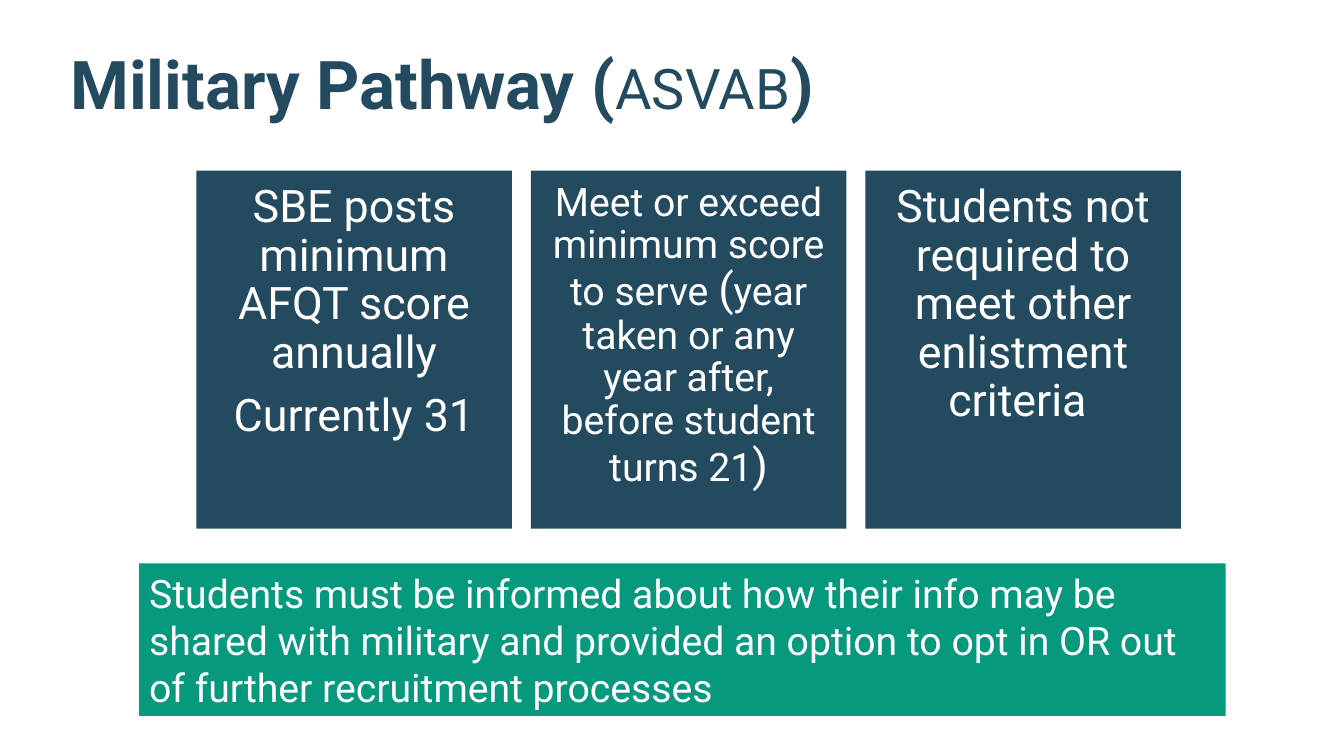
from pptx import Presentation
from pptx import util as u
from pptx.dml.color import RGBColor
from pptx.enum import shapes, text

NAVY = RGBColor(0x24, 0x4A, 0x5F)
GREEN = RGBColor(0x06, 0x99, 0x7E)
WHITE = RGBColor(0xFF, 0xFF, 0xFF)


class SlideBuilder:
    font = "Roboto"

    def __init__(self, prs):
        self.s = prs.slides.add_slide(prs.slide_layouts[5])

    def add_runs(self, p, runs, color):
        p.font.name = self.font
        p.font.color.rgb = color
        sizes = {size for _, size, _ in runs}
        if len(sizes) == 1:
            p.font.size = u.Pt(sizes.pop())
        for words, size, bold in runs:
            r = p.add_run()
            r.text = words
            r.font.name = self.font
            r.font.color.rgb = color
            r.font.size = u.Pt(size)
            r.font.bold = bold

    def title(self, runs, left, top, width, height):
        sp = self.s.shapes.title
        sp.left, sp.top = u.Cm(left), u.Cm(top)
        sp.width, sp.height = u.Cm(width), u.Cm(height)
        tf = sp.text_frame
        tf.word_wrap = True
        tf.auto_size = text.MSO_AUTO_SIZE.NONE
        tf.vertical_anchor = text.MSO_ANCHOR.BOTTOM
        p = tf.paragraphs[0]
        p.alignment = text.PP_ALIGN.LEFT
        p.line_spacing = 0.9
        self.add_runs(p, runs, NAVY)

    def box(self, left, top, width, height, fill, anchor):
        sp = self.s.shapes.add_shape(shapes.MSO_SHAPE.RECTANGLE, u.Cm(left),
                                     u.Cm(top), u.Cm(width), u.Cm(height))
        sp.shadow.inherit = False
        sp.fill.solid()
        sp.fill.fore_color.rgb = fill
        sp.line.fill.background()
        tf = sp.text_frame
        tf.word_wrap = True
        tf.vertical_anchor = anchor
        return tf

    def card(self, paragraphs, left, top, width, height, inset):
        tf = self.box(left, top, width, height, NAVY, text.MSO_ANCHOR.TOP)
        tf.margin_left = tf.margin_right = u.Cm(inset)
        tf.margin_top = tf.margin_bottom = u.Cm(inset)
        for i, runs in enumerate(paragraphs):
            p = tf.add_paragraph() if i else tf.paragraphs[0]
            p.alignment = text.PP_ALIGN.CENTER
            p.line_spacing = 0.9
            p.space_after = u.Pt(11)
            self.add_runs(p, runs, WHITE)

    def banner(self, words, left, top, width, height):
        tf = self.box(left, top, width, height, GREEN, text.MSO_ANCHOR.MIDDLE)
        p = tf.paragraphs[0]
        p.alignment = text.PP_ALIGN.LEFT
        self.add_runs(p, [(words, 28, False)], WHITE)


def main():
    prs = Presentation()
    prs.slide_width, prs.slide_height = u.Cm(33.87), u.Cm(19.05)
    slide = SlideBuilder(prs)
    slide.title([("Military Pathway (", 48, True), ("ASVAB", 40, False),
                 (")", 48, True)], 1.52, 0.69, 29.21, 2.57)

    cards = [
        ([[("SBE posts minimum AFQT score annually", 32, False)],
          [("Currently 31", 32, False)]], 0.34),
        ([[("Meet or exceed minimum score to serve ", 28, False),
           ("(", 32, False),
           ("year taken or any year after, before student turns 21", 28, False),
           (")", 32, False)]], 0.3),
        ([[("Students not required to meet other enlistment criteria ",
            32, False)]], 0.34),
    ]
    for i, (paragraphs, inset) in enumerate(cards):
        slide.card(paragraphs, 4.95 + 8.43 * i, 4.3, 7.95, 9.02, inset)

    slide.banner("Students must be informed about how their info may be shared "
                 "with military and provided an option to opt in OR out of "
                 "further recruitment processes", 3.51, 14.2, 27.38, 3.84)
    prs.save("out.pptx")


if __name__ == "__main__":
    main()
